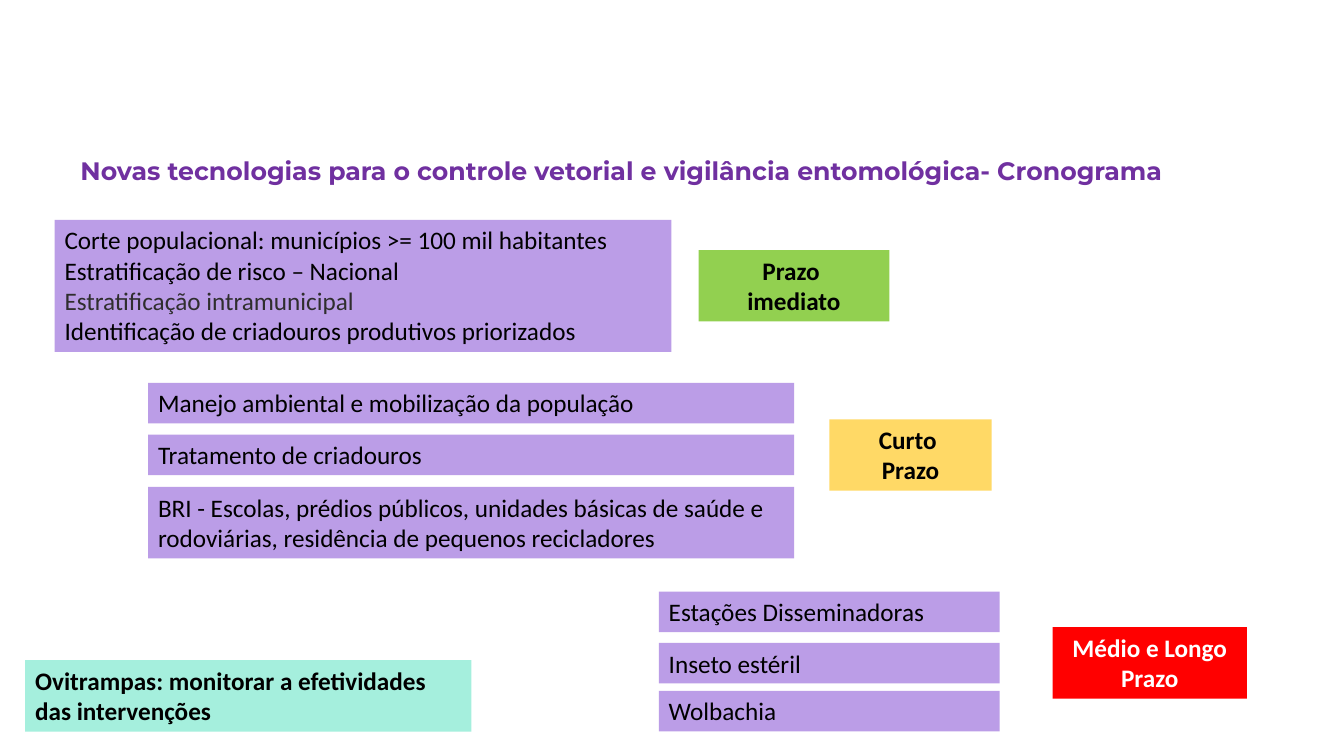
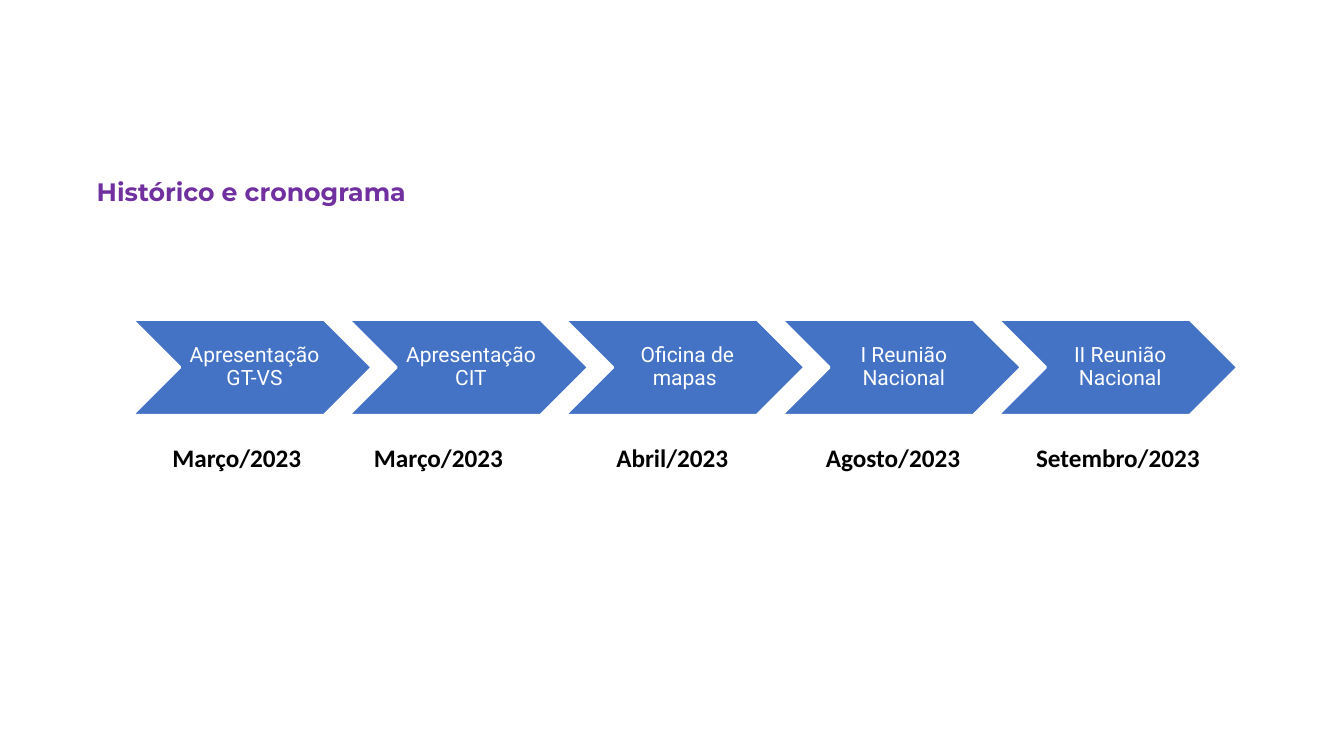
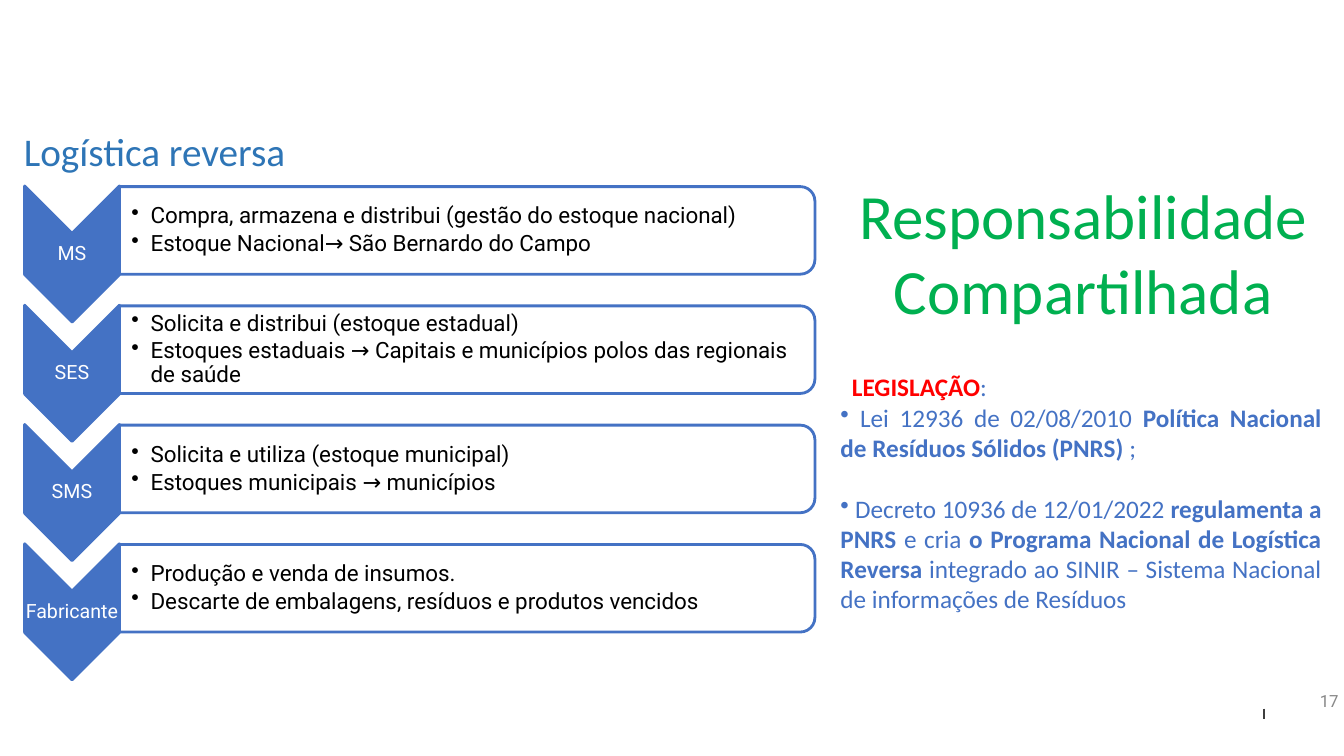
from lxml import etree
from pptx import Presentation
from pptx.dml.color import RGBColor
from pptx.enum.shapes import MSO_CONNECTOR, MSO_SHAPE
from pptx.enum.text import MSO_ANCHOR, PP_ALIGN
from pptx.oxml.ns import qn
from pptx.util import Pt

LEFT, CENTER, RIGHT, JUSTIFY = (
    PP_ALIGN.LEFT, PP_ALIGN.CENTER, PP_ALIGN.RIGHT, PP_ALIGN.JUSTIFY)
TOP, MIDDLE = MSO_ANCHOR.TOP, MSO_ANCHOR.MIDDLE
RECT, CHEVRON = MSO_SHAPE.RECTANGLE, MSO_SHAPE.CHEVRON
ROUND_TOP = MSO_SHAPE.ROUND_2_SAME_RECTANGLE
STRAIGHT = MSO_CONNECTOR.STRAIGHT

COLORS = {
    "black": "000000", "white": "FFFFFF", "title": "7030A0",
    "lilac": "BB9DE7", "mint": "A5EFDD", "lime": "92D050",
    "yellow": "FFD966", "red": "FF0000", "blue": "4472C4",
    "heading": "2E75B6", "green": "00B050", "muted": "2F2E2E",
    "page": "888888", "mark": "3E3E3E",
}
PADDING = (7.2, 3.6, 7.2, 3.6)
TIGHT = (3.6, 3.6, 3.6, 3.6)


def rgb(name):
    return RGBColor.from_string(COLORS[name])


def add_paragraph(tf, runs, size=18, font="Calibri", color="black", bold=False,
                  align=LEFT, spacing=None, before=None, after=None,
                  bullet=False, margin=0, indent=0):
    """Add one paragraph; runs is a string or a list of (text, overrides)."""
    p = tf.paragraphs[0]
    if p.runs:
        p = tf.add_paragraph()
    pPr = p._p.get_or_add_pPr()
    pPr.set("marL", str(Pt(margin)))
    pPr.set("indent", str(Pt(indent)))
    if bullet:
        etree.SubElement(pPr, qn("a:buChar")).set("char", "•")
    p.alignment = align
    if spacing:
        p.line_spacing = spacing
    if before:
        p.space_before = Pt(before)
    if after:
        p.space_after = Pt(after)
    for text, own in [(runs, {})] if isinstance(runs, str) else runs:
        r = p.add_run()
        r.text = text
        r.font.size = Pt(size)
        r.font.name = font
        r.font.bold = own.get("bold", bold)
        r.font.color.rgb = rgb(own.get("color", color))


def write(sp, paragraphs, anchor=TOP, padding=PADDING, **fmt):
    """Fill a shape or text box with equally formatted paragraphs."""
    tf = sp.text_frame
    tf.word_wrap = True
    tf.vertical_anchor = anchor
    (tf.margin_left, tf.margin_top,
     tf.margin_right, tf.margin_bottom) = map(Pt, padding)
    for runs in paragraphs:
        add_paragraph(tf, runs, **fmt)
    return tf


def add_text(s, box, *paragraphs, **fmt):
    return write(s.shapes.add_textbox(*map(Pt, box)), paragraphs, **fmt)


def add_shape(s, kind, box, fill, line=None):
    sp = s.shapes.add_shape(kind, *map(Pt, box))
    sp.shadow.inherit = False
    sp.fill.solid()
    sp.fill.fore_color.rgb = rgb(fill)
    if line:
        sp.line.color.rgb = rgb(line)
        sp.line.width = Pt(2)
    else:
        sp.line.fill.background()
    return sp


def add_turned(s, kind, box, fill, line):
    """Add a shape turned by 90 degrees that covers the given box."""
    x, y, w, h = box
    sp = add_shape(s, kind, (x + (w - h) / 2, y + (h - w) / 2, h, w), fill, line)
    sp.rotation = 90
    return sp


def add_title(s, x, y, w, text):
    add_text(s, (x, y, w, 28.8), text, font="Montserrat", color="title", bold=True)


# Slide 1: actions and their deadlines
def actions(s, x, w, bars):
    for y, h, paragraphs in bars:
        write(add_shape(s, RECT, (x, y, w, h), "lilac"), paragraphs)


def label(s, box, fill, *paragraphs, **fmt):
    write(add_shape(s, RECT, box, fill), paragraphs, bold=True, **fmt)


def schedule_slide(s):
    add_title(s, 50.4, 107.3, 882,
              "Novas tecnologias para o controle vetorial e vigilância "
              "entomológica- Cronograma")
    actions(s, 39, 440.6, [(157, 94.3, [
        "Corte populacional: municípios >= 100 mil habitantes",
        "Estratificação de risco – Nacional",
        [("Estratificação intramunicipal", {"color": "muted"})],
        "Identificação de criadouros produtivos priorizados"])])
    actions(s, 105.8, 461.5, [
        (273.4, 29, ["Manejo ambiental e mobilização da população"]),
        (310.4, 29, ["Tratamento de criadouros"]),
        (347.8, 51, ["BRI - Escolas, prédios públicos, unidades básicas de saúde e "
                     "rodoviárias, residência de pequenos recicladores"])])
    actions(s, 470.6, 243.5, [
        (422.6, 29, ["Estações Disseminadoras"]),
        (459.2, 29, ["Inseto estéril"]),
        (493.4, 29, ["Wolbachia"])])
    label(s, (18, 471.6, 318.8, 51), "mint",
          "Ovitrampas: monitorar a efetividades das intervenções")
    label(s, (499, 178.6, 136.3, 51), "lime", "Prazo ", "imediato", align=CENTER)
    label(s, (592.4, 299.5, 116, 51), "yellow", "Curto ", "Prazo", align=CENTER)
    label(s, (751.9, 448, 138.7, 51), "red", "Médio e Longo Prazo",
          color="white", align=CENTER)


# Slide 2: chain of events with a date under each
def timeline(s, x, y, events):
    w, h, pitch = 171.4, 68.4, 154.6
    for i, (event, date, date_x, date_w, align) in enumerate(events):
        sp = add_shape(s, CHEVRON, (x + i * pitch, y, w, h), "blue", "white")
        write(sp, [event], anchor=MIDDLE, padding=(5, 1.4, 1.4, 1.4), size=15,
              font="Roboto", color="white", align=CENTER, spacing=0.9)
        add_text(s, (x + date_x, y + 84.3, date_w, 28.8), date,
                 bold=True, padding=TIGHT, align=align)


def history_slide(s):
    add_title(s, 62, 122.4, 260.6, "Histórico e cronograma")
    timeline(s, 94.3, 228.2, [
        ("Apresentação GT-VS", "Março/2023", 25.2, 118, LEFT),
        ("Apresentação CIT", "Março/2023", 169.2, 118, LEFT),
        ("Oficina de mapas ", "Abril/2023", 326.9, 118, CENTER),
        ("I Reunião Nacional", "Agosto/2023", 484.6, 118, CENTER),
        ("II Reunião Nacional", "Setembro/2023", 636.5, 135.4, CENTER)])


# Slide 3: levels of responsibility beside the legislation
def levels(s, x, y, rows):
    pitch, arrow_w, arrow_h, panel_w, panel_h = 85.2, 67.7, 97.2, 496.8, 62.6
    for i, (name, duties) in enumerate(rows):
        top = y + i * pitch
        add_turned(s, CHEVRON, (x, top, arrow_w, arrow_h), "blue", "blue")
        add_text(s, (x, top + 34.2, arrow_w, 28.8), name, anchor=MIDDLE,
                 padding=(0.7,) * 4, size=14, font="Roboto", color="white",
                 align=CENTER, spacing=0.9)
        panel_x, panel_y = x + arrow_w, top + 0.5
        add_turned(s, ROUND_TOP, (panel_x, panel_y, panel_w, panel_h), "white", "blue")
        add_text(s, (panel_x, panel_y + 3, panel_w - 3, panel_h - 6), *duties,
                 anchor=MIDDLE, padding=(8.6, 0.7, 0.7, 0.7), size=16,
                 font="Roboto", spacing=0.9, after=2.4, bullet=True,
                 margin=13.7, indent=-13.7)


def legislation(s, box):
    strong = {"bold": True}
    tf = add_text(s, box, [("LEGISLAÇÃO", {"bold": True, "color": "red"}), (": ", {})],
                  color="blue", margin=8.2)
    law = {"color": "blue", "align": JUSTIFY, "bullet": True}
    add_paragraph(tf, [
        (" Lei 12936 de 02/08/2010 ", {}),
        ("Política Nacional de Resíduos Sólidos (PNRS)", strong),
        (" ;", {})], **law)
    add_paragraph(tf, [
        (" Decreto 10936 de 12/01/2022", {}),
        (" regulamenta a PNRS ", strong),
        ("e cria ", {}),
        ("o Programa Nacional de Logística Reversa ", strong),
        ("integrado ao SINIR – Sistema Nacional de informações de Resíduos", {})],
        before=21.8, **law)


def footer(s, number):
    add_text(s, (735.8, 486, 224, 28.8), number, anchor=MIDDLE, padding=TIGHT,
             size=12, font="Roboto", color="page", align=RIGHT)
    mark = s.shapes.add_connector(STRAIGHT, Pt(902.9), Pt(506.2), Pt(902.9), Pt(513.4))
    mark.line.color.rgb = rgb("mark")
    mark.line.width = Pt(2)
    etree.SubElement(mark._element.spPr, qn("a:effectLst"))


def logistics_slide(s):
    footer(s, "17")
    add_text(s, (10, 87.1, 445.7, 41), "Logística reversa", size=28, color="heading")
    levels(s, 17.6, 132.8, [
        ("MS", ["Compra, armazena e distribui (gestão do estoque nacional)",
                "Estoque Nacional→ São Bernardo do Campo"]),
        ("SES", ["Solicita e distribui (estoque estadual)",
                 "Estoques estaduais → Capitais e municípios polos das regionais "
                 "de saúde"]),
        ("SMS", ["Solicita e utiliza (estoque municipal)",
                 "Estoques municipais → municípios"]),
        ("Fabricante", ["Produção e venda de insumos.",
                        "Descarte de embalagens, resíduos e produtos vencidos"])])
    add_text(s, (593.3, 122.4, 360.7, 118.8), "Responsabilidade Compartilhada",
             size=45, color="green", align=CENTER)
    legislation(s, (593.3, 262, 357.8, 203.8))


def main():
    prs = Presentation()
    prs.slide_width, prs.slide_height = Pt(960), Pt(540)
    for build in (schedule_slide, history_slide, logistics_slide):
        build(prs.slides.add_slide(prs.slide_layouts[6]))
    prs.save("out.pptx")


if __name__ == "__main__":
    main()
